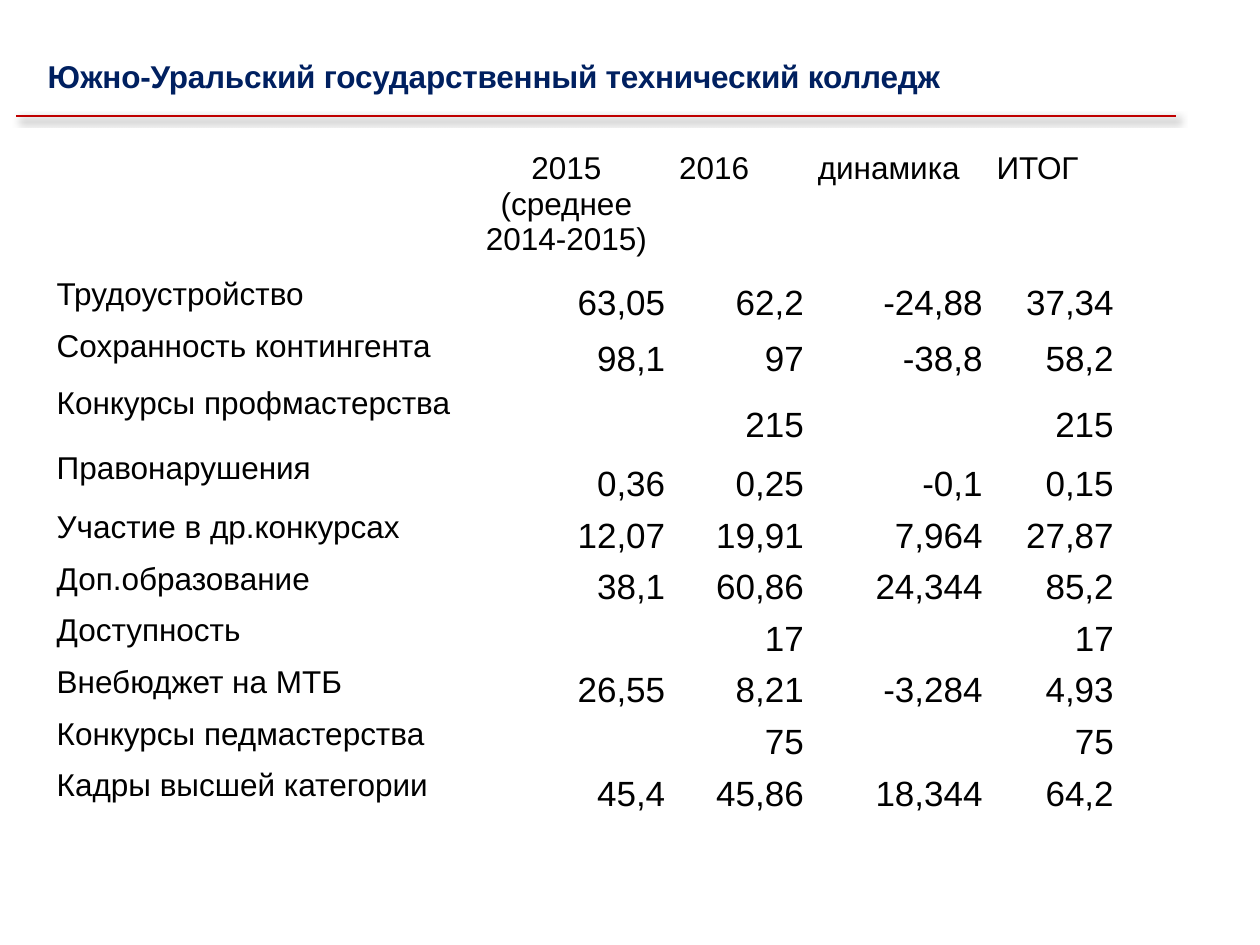
"""Build the college indicator slide with its title, rule and results table."""
from dataclasses import dataclass

from lxml import etree
from pptx import Presentation
from pptx import util as u
from pptx.dml.color import RGBColor
from pptx.enum import shapes, text
from pptx.oxml import ns


@dataclass(frozen=True)
class Theme:
    font: str = "Arial"
    title: str = "002060"
    rule: str = "C00000"
    body: str = "000000"
    label_size: float = 18
    value_size: float = 20


@dataclass(frozen=True)
class Indicator:
    label: str
    values: tuple[str, str, str, str]
    height: float = 29.5


THEME = Theme()
HEADINGS = ("", "2015 (среднее 2014-2015)", "2016", "динамика", "ИТОГ")
HEADER_HEIGHT = 29.5
COLUMN_WIDTHS = (241.2, 114.5, 79.2, 102.2, 74.9)
INDICATORS = (
    Indicator("Трудоустройство", ("63,05", "62,2", "-24,88", "37,34")),
    Indicator("Сохранность контингента", ("98,1", "97", "-38,8", "58,2"), 32.4),
    Indicator("Конкурсы профмастерства", ("", "215", "", "215"), 37.4),
    Indicator("Правонарушения", ("0,36", "0,25", "-0,1", "0,15"), 33.8),
    Indicator("Участие в др.конкурсах", ("12,07", "19,91", "7,964", "27,87")),
    Indicator("Доп.образование", ("38,1", "60,86", "24,344", "85,2")),
    Indicator("Доступность", ("", "17", "", "17")),
    Indicator("Внебюджет на МТБ", ("26,55", "8,21", "-3,284", "4,93")),
    Indicator("Конкурсы педмастерства", ("", "75", "", "75")),
    Indicator("Кадры высшей категории", ("45,4", "45,86", "18,344", "64,2")),
)


def write_text(frame, content: str, *, size: float = THEME.label_size,
               color: str = THEME.body, bold: bool = False,
               align=text.PP_ALIGN.LEFT, spacing: float = 0) -> None:
    paragraph = frame.paragraphs[0]
    paragraph.alignment = align
    run = paragraph.add_run()
    run.text = content
    run.font.name = THEME.font
    run.font.size = u.Pt(size)
    run.font.bold = bold
    run.font.color.rgb = RGBColor.from_string(color)
    if spacing:
        run.font._element.set("spc", str(round(spacing * 100)))


def add_title(slide) -> None:
    box = slide.shapes.add_textbox(u.Pt(20.2), u.Pt(28.8), u.Pt(527.8), u.Pt(28.8))
    box.text_frame.word_wrap = False
    box.text_frame.auto_size = text.MSO_AUTO_SIZE.SHAPE_TO_FIT_TEXT
    write_text(box.text_frame, "Южно-Уральский государственный технический колледж",
               color=THEME.title, bold=True, spacing=-0.1)


def add_rule(slide) -> None:
    rule = slide.shapes.add_connector(shapes.MSO_CONNECTOR.STRAIGHT,
                                      u.Pt(9.4), u.Pt(66.2), u.Pt(671.8), u.Pt(66.2))
    rule.line.color.rgb = RGBColor.from_string(THEME.rule)
    rule.line.width = u.Pt(1.5)
    effects = etree.SubElement(rule._element.spPr, ns.qn("a:effectLst"))
    shadow = etree.SubElement(effects, ns.qn("a:outerShdw"), blurRad=str(u.Pt(4)),
                              dist=str(u.Pt(3)), dir=str(45 * 60000),
                              algn="tl", rotWithShape="0")
    color = etree.SubElement(shadow, ns.qn("a:srgbClr"), val=THEME.body)
    etree.SubElement(color, ns.qn("a:alpha"), val="40000")


def fill_value(cell, value: str) -> None:
    cell.vertical_anchor = text.MSO_ANCHOR.BOTTOM
    cell.margin_left = cell.margin_top = cell.margin_right = u.Pt(0.75)
    cell.margin_bottom = 0
    write_text(cell.text_frame, value, size=THEME.value_size, align=text.PP_ALIGN.RIGHT)


def add_results(slide) -> None:
    heights = [HEADER_HEIGHT] + [indicator.height for indicator in INDICATORS]
    table = slide.shapes.add_table(
        len(heights), len(COLUMN_WIDTHS), u.Pt(25.2), u.Pt(82.8),
        u.Pt(sum(COLUMN_WIDTHS)), u.Pt(sum(heights))).table
    table.first_row = table.horz_banding = False
    for column, width in zip(table.columns, COLUMN_WIDTHS):
        column.width = u.Pt(width)
    for row, height in zip(table.rows, heights):
        row.height = u.Pt(height)
    for cell in table.iter_cells():
        cell.fill.background()
    for index, heading in enumerate(HEADINGS):
        if heading:
            align = text.PP_ALIGN.CENTER if index == 1 else text.PP_ALIGN.LEFT
            write_text(table.cell(0, index).text_frame, heading, align=align)
    for row_index, indicator in enumerate(INDICATORS, 1):
        write_text(table.cell(row_index, 0).text_frame, indicator.label)
        for column_index, value in enumerate(indicator.values, 1):
            if value:
                fill_value(table.cell(row_index, column_index), value)


def main() -> None:
    presentation = Presentation()
    presentation.slide_width, presentation.slide_height = u.Pt(720), u.Pt(540)
    slide = presentation.slides.add_slide(presentation.slide_layouts[6])
    add_rule(slide)
    add_title(slide)
    add_results(slide)
    presentation.save("out.pptx")


if __name__ == "__main__":
    main()
